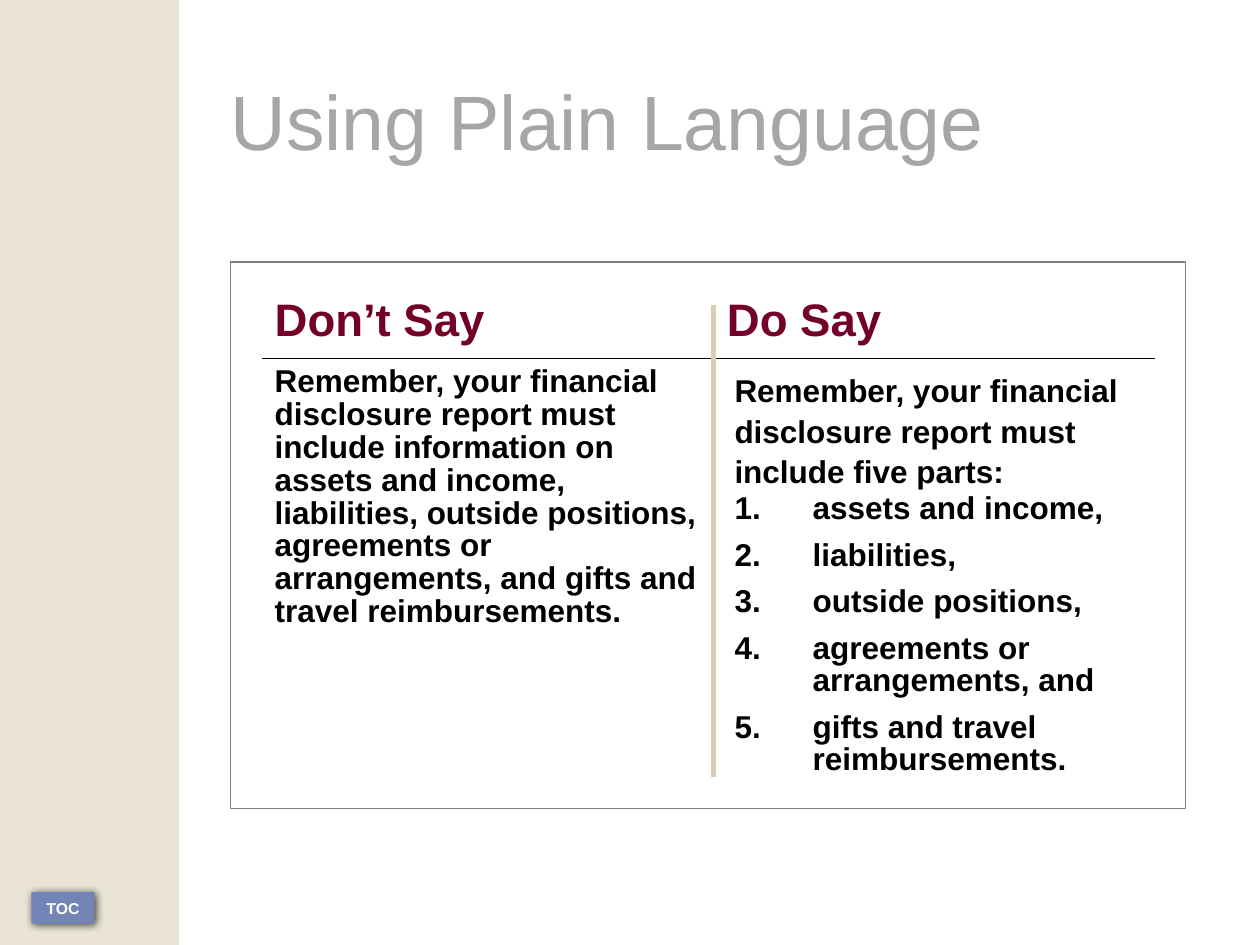
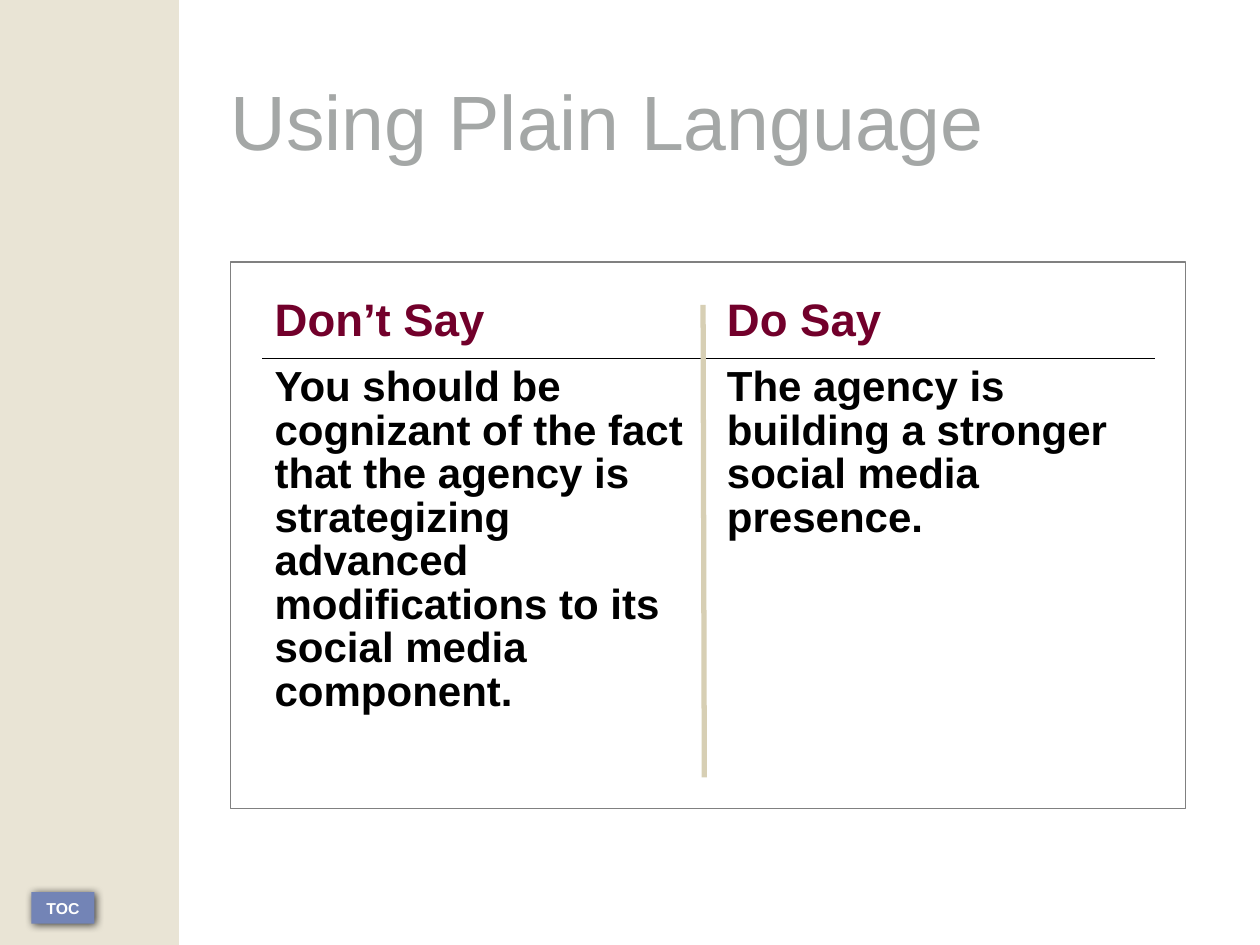
"""Build two slides that compare wordy phrasing with plain language."""
from dataclasses import dataclass

import pptx
import pptx.dml.color
import pptx.enum.shapes
import pptx.enum.text
import pptx.oxml
import pptx.oxml.ns
import pptx.util

EMU_PER_PX = 9144
FONT = "Arial"
WHITE, BLACK = "FFFFFF", "000000"
SAND, TAN, BLUE = "E9E4D5", "D7CFB4", "7384B6"
TITLE_GREY, FRAME_GREY, MAROON = "A4A7A6", "808080", "72002B"
NO_MARGINS = (0, 0, 0, 0)
COLUMN_WIDTHS = (359, 350)
HEADINGS = ("Don’t Say", "Do Say")
HEADER_HEIGHT = 55
PLAIN_TABLE_STYLE = "{2D5ABB26-0587-4C30-8999-92F81FD0307C}"
LEFT = pptx.enum.text.PP_ALIGN.LEFT
CENTER = pptx.enum.text.PP_ALIGN.CENTER
TOP = pptx.enum.text.MSO_ANCHOR.TOP
MIDDLE = pptx.enum.text.MSO_ANCHOR.MIDDLE


@dataclass(frozen=True)
class Box:
    left: int
    top: int
    width: int
    height: int

    def emu(self) -> tuple:
        return tuple(px(value) for value in (self.left, self.top, self.width, self.height))


@dataclass(frozen=True)
class TextBlock:
    box: Box
    text: str
    line_spacing: float
    space_before: float
    numbered: bool = False


@dataclass(frozen=True)
class Comparison:
    dont_say: str
    do_say: str
    size: int
    space_before: float
    body_height: int
    divider_top_x: int
    divider_bottom_x: int
    blocks: tuple = ()


SIDE_BAND = Box(0, 0, 142, 750)
CONTENTS_BUTTON = Box(25, 708, 50, 25)
TITLE = Box(183, 67, 783, 125)
FRAME = Box(183, 208, 758, 434)
TABLE_LEFT, TABLE_TOP = 208, 229
DIVIDER_TOP, DIVIDER_BOTTOM = 242, 617

COMPARISONS = (
    Comparison(
        "Remember, your financial disclosure report must include information on assets and "
        "income, liabilities, outside positions, agreements or arrangements, and gifts and "
        "travel reimbursements.",
        "", 18, 5, 344, 566, 566,
        (
            TextBlock(
                Box(583, 292, 350, 108),
                "Remember, your financial disclosure report must include five parts:",
                1.08, 7.5,
            ),
            TextBlock(
                Box(583, 392, 350, 233),
                "assets and income,\nliabilities,\noutside positions,\n"
                "agreements or arrangements, and\ngifts and travel reimbursements.",
                0.86, 8, numbered=True,
            ),
        ),
    ),
    Comparison(
        "You should be cognizant of the fact that the agency is strategizing advanced "
        "modifications to its social media component.",
        "The agency is building a stronger social media presence.",
        24, 6, 330, 558, 559,
    ),
)


def px(value: int) -> pptx.util.Emu:
    return pptx.util.Emu(value * EMU_PER_PX)


def color(value: str) -> pptx.dml.color.RGBColor:
    return pptx.dml.color.RGBColor.from_string(value)


def add_xml(parent, xml: str, index: int | None = None) -> None:
    tag, rest = xml.split(" ", 1)
    element = pptx.oxml.parse_xml(f"{tag} {pptx.oxml.ns.nsdecls('a')} {rest}")
    parent.insert(len(parent) if index is None else index, element)


def number_paragraph(paragraph) -> None:
    properties = paragraph._p.get_or_add_pPr()
    properties.set("marL", str(px(62)))
    properties.set("indent", str(px(-62)))
    add_xml(properties, '<a:buFont typeface="+mj-lt"/>')
    add_xml(properties, '<a:buAutoNum type="arabicPeriod"/>')


def write_text(
    frame, text: str, *, size: float, text_color: str, bold: bool = True,
    line_spacing: float | None = None, space_before: float = 0,
    alignment=LEFT, numbered: bool = False,
) -> None:
    for index, line in enumerate(text.split("\n")):
        paragraph = frame.add_paragraph() if index else frame.paragraphs[0]
        paragraph.alignment = alignment
        paragraph.space_before = pptx.util.Pt(space_before)
        if line_spacing:
            paragraph.line_spacing = line_spacing
        if numbered:
            number_paragraph(paragraph)
        run = paragraph.add_run()
        run.text = line
        run.font.name = FONT
        run.font.size = pptx.util.Pt(size)
        run.font.bold = bold
        run.font.color.rgb = color(text_color)


def set_margins(target, margins: tuple) -> None:
    for side, margin in zip(("left", "top", "right", "bottom"), margins):
        setattr(target, f"margin_{side}", px(margin))


def prepare_frame(frame, margins: tuple = NO_MARGINS, anchor=TOP) -> None:
    frame.word_wrap = True
    frame.auto_size = pptx.enum.text.MSO_AUTO_SIZE.NONE
    frame.vertical_anchor = anchor
    set_margins(frame, margins)


def add_rectangle(slide, box: Box, fill: str | None = None, line: str | None = None):
    rectangle = pptx.enum.shapes.MSO_SHAPE.RECTANGLE
    shape = slide.shapes.add_shape(rectangle, *box.emu())
    shape.shadow.inherit = False
    if fill:
        shape.fill.solid()
        shape.fill.fore_color.rgb = color(fill)
    else:
        shape.fill.background()
    if line:
        shape.line.color.rgb = color(line)
        shape.line.width = pptx.util.Pt(0.75)
    else:
        shape.line.fill.background()
    return shape


def add_contents_button(slide) -> None:
    button = add_rectangle(slide, CONTENTS_BUTTON, fill=BLUE)
    effects = button._element.spPr.find(pptx.oxml.ns.qn("a:effectLst"))
    add_xml(
        effects,
        f'<a:outerShdw blurRad="{pptx.util.Pt(5)}" dist="{pptx.util.Pt(1.4)}" '
        f'dir="2700000" algn="tl" rotWithShape="0"><a:srgbClr val="{BLACK}">'
        '<a:alpha val="75000"/></a:srgbClr></a:outerShdw>',
    )
    prepare_frame(button.text_frame, (10, 5, 10, 5), MIDDLE)
    write_text(button.text_frame, "TOC", size=9, text_color=WHITE, alignment=CENTER)


def place_title(slide, text: str) -> None:
    title = slide.shapes.title
    title.left, title.top, title.width, title.height = TITLE.emu()
    prepare_frame(title.text_frame)
    write_text(title.text_frame, text, size=44, text_color=TITLE_GREY,
               bold=False, line_spacing=0.9)


def add_cell_border(cell, edge: str) -> None:
    add_xml(
        cell._tc.get_or_add_tcPr(),
        f'<a:{edge} w="{pptx.util.Pt(0.45)}"><a:solidFill>'
        f'<a:srgbClr val="{BLACK}"/></a:solidFill></a:{edge}>',
        index=0,
    )


def add_comparison_table(slide, comparison: Comparison) -> None:
    heights = (HEADER_HEIGHT, comparison.body_height)
    box = Box(TABLE_LEFT, TABLE_TOP, sum(COLUMN_WIDTHS), sum(heights))
    table = slide.shapes.add_table(2, 2, *box.emu()).table
    table.first_row = table.horz_banding = False
    table._tbl.tblPr.find(pptx.oxml.ns.qn("a:tableStyleId")).text = PLAIN_TABLE_STYLE
    for row, height in zip(table.rows, heights):
        row.height = px(height)
    bodies = (comparison.dont_say, comparison.do_say)
    for index, width in enumerate(COLUMN_WIDTHS):
        table.columns[index].width = px(width)
        header, body = table.cell(0, index), table.cell(1, index)
        for cell, margin_top, edge in ((header, 8, "lnB"), (body, 7, "lnT")):
            set_margins(cell, (10, margin_top, 10, 5))
            cell.fill.background()
            add_cell_border(cell, edge)
        write_text(header.text_frame, HEADINGS[index], size=26,
                   text_color=MAROON, line_spacing=0.93)
        if bodies[index]:
            write_text(body.text_frame, bodies[index], size=comparison.size,
                       text_color=BLACK, line_spacing=0.93,
                       space_before=comparison.space_before)


def add_divider(slide, top_x: int, bottom_x: int) -> None:
    divider = slide.shapes.add_connector(
        pptx.enum.shapes.MSO_CONNECTOR.STRAIGHT,
        px(top_x), px(DIVIDER_TOP), px(bottom_x), px(DIVIDER_BOTTOM),
    )
    divider.line.color.rgb = color(TAN)
    divider.line.width = pptx.util.Pt(3)
    add_xml(divider._element.spPr, "<a:effectLst />")


def add_text_block(slide, block: TextBlock) -> None:
    frame = slide.shapes.add_textbox(*block.box.emu()).text_frame
    prepare_frame(frame)
    write_text(frame, block.text, size=18, text_color=BLACK,
               line_spacing=block.line_spacing, space_before=block.space_before,
               numbered=block.numbered)


def add_comparison_slide(presentation, comparison: Comparison) -> None:
    slide = presentation.slides.add_slide(presentation.slide_layouts[5])
    add_rectangle(slide, SIDE_BAND, fill=SAND)
    add_contents_button(slide)
    place_title(slide, "Using Plain Language")
    add_comparison_table(slide, comparison)
    add_rectangle(slide, FRAME, line=FRAME_GREY)
    add_divider(slide, comparison.divider_top_x, comparison.divider_bottom_x)
    for block in comparison.blocks:
        add_text_block(slide, block)


def main() -> None:
    presentation = pptx.Presentation()
    presentation.slide_width, presentation.slide_height = px(1000), px(750)
    for comparison in COMPARISONS:
        add_comparison_slide(presentation, comparison)
    presentation.save("out.pptx")


if __name__ == "__main__":
    main()
